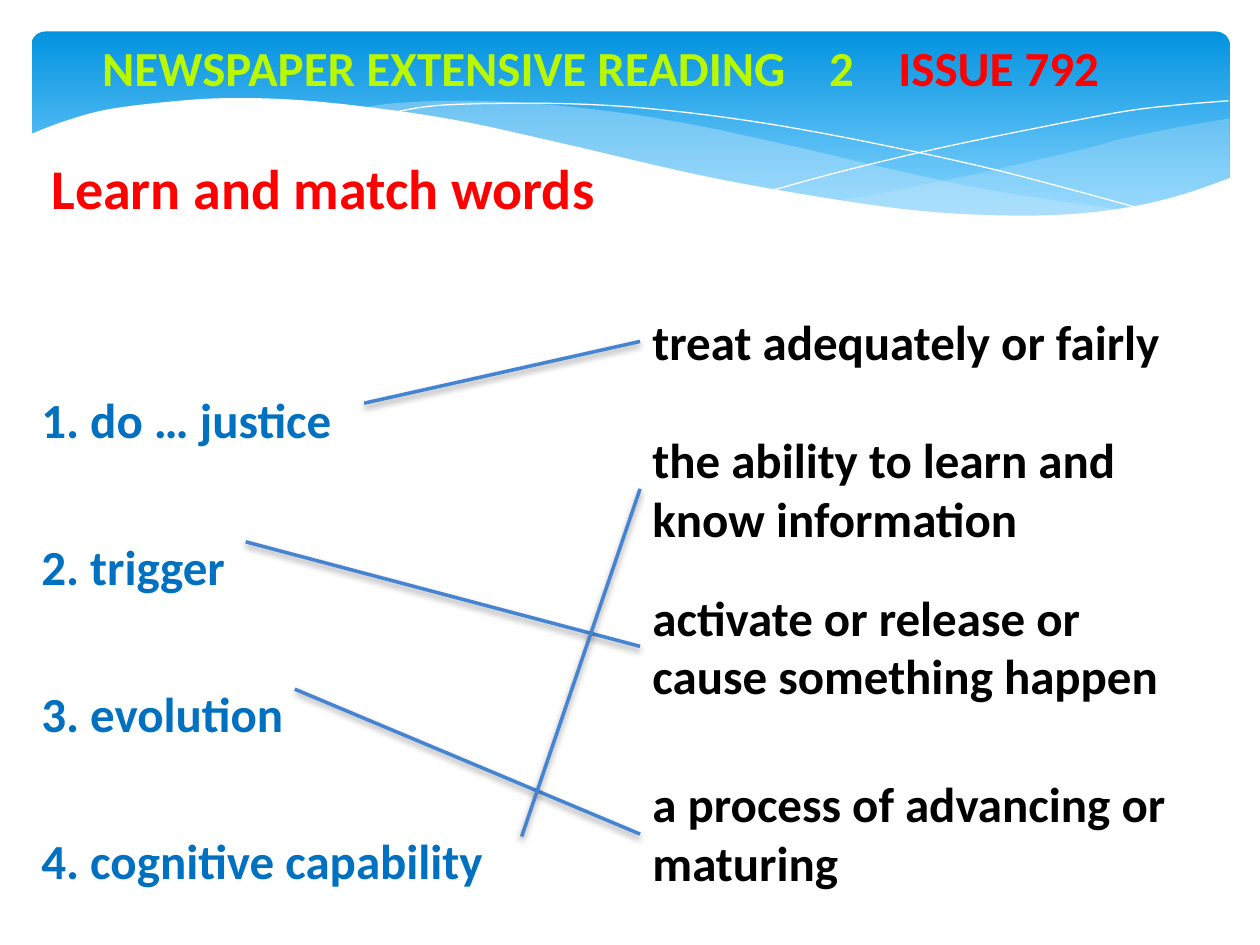
from pptx import Presentation
from pptx.dml.color import RGBColor
from pptx.enum.shapes import MSO_CONNECTOR, MSO_SHAPE
from pptx.enum.text import MSO_AUTO_SIZE, PP_ALIGN
from pptx.oxml import parse_xml
from pptx.oxml.ns import nsdecls
from pptx.util import Inches, Pt
from lxml.etree import SubElement

HUES = {
    "deep": "0293E0", "sky": "83D3FE", "pale": "C6E7FC", "white": "FFFFFF",
    "lime": "B9F800", "red": "FF0000", "blue": "0070C0", "black": "000000",
    "link": "4584D3",
}

RIGHT = [
    [(9.76, 0.94), (9.35, 1.01), (8.91, 1.1), (8.61, 1.18), (7.79, 1.37), (7.06, 1.52), (6.61, 1.6)],
    [(6.61, 1.6), (7.19, 1.67), (7.81, 1.72), (8.35, 1.72), (8.89, 1.66), (9.35, 1.56), (9.76, 1.41)],
]
MID = [
    [(8.93, 1.67), (8.37, 1.59), (7.75, 1.49), (7.06, 1.34), (6.29, 1.16), (5.55, 1),
     (4.89, 0.89), (4.2, 0.82), (3.61, 0.8), (3.13, 0.82), (2.86, 0.86)],
    [(2.86, 0.86), (3.42, 0.94), (4.04, 1.06), (4.91, 1.26), (5.66, 1.43), (6.34, 1.56),
     (6.95, 1.65), (7.61, 1.71), (8.18, 1.73), (8.57, 1.71), (8.93, 1.67)],
]
BASE = [
    [(9.77, 1.41), (9.4, 1.54), (8.99, 1.64), (8.5, 1.7), (7.93, 1.71), (7.26, 1.67),
     (6.48, 1.56), (5.55, 1.39), (4.47, 1.14), (3.65, 0.96), (2.92, 0.85), (2.3, 0.79),
     (1.77, 0.78), (1.32, 0.81), (0.85, 0.87), (0.52, 0.96), (0.23, 1.07)],
    [(0.23, 2.24), (9.77, 2.24)],
]
FALL = [[(3.09, 0.9), (3.44, 0.84), (4.01, 0.82), (4.69, 0.83), (5.33, 0.88), (6.08, 0.98),
         (6.95, 1.14), (7.95, 1.36), (9.07, 1.66)]]
RISE = [[(6.13, 1.51), (6.72, 1.35), (7.48, 1.17), (8.36, 0.99), (8.95, 0.88), (9.38, 0.83), (9.75, 0.8)]]


def curve(knots, steps=6):
    ends = [knots[0], *knots, knots[-1]]
    dots = [knots[0]]
    for quad in zip(ends, ends[1:], ends[2:], ends[3:]):
        for step in range(1, steps + 1):
            t = step / steps
            dots.append(tuple(
                (2 * b + (c - a) * t + (2 * a - 5 * b + 4 * c - d) * t ** 2
                 + (3 * b - a - 3 * c + d) * t ** 3) / 2
                for a, b, c, d in zip(*quad)))
    return dots


class Deck:
    font = "Calibri"

    def __init__(self):
        self.file = Presentation()
        self.file.slide_width, self.file.slide_height = Inches(10), Inches(7.5)
        self.slide = self.file.slides.add_slide(self.file.slide_layouts[6])

    def hue(self, name):
        return RGBColor.from_string(HUES[name])

    def panel(self, x, y, w, h):
        box = self.slide.shapes.add_shape(
            MSO_SHAPE.ROUNDED_RECTANGLE, Inches(x), Inches(y), Inches(w), Inches(h))
        box.adjustments[0] = 0.07
        box.shadow.inherit = False
        box.line.fill.background()
        box.fill.gradient()
        box.fill.gradient_angle = 270
        for stop, (name, spot) in zip(box.fill.gradient_stops, (("deep", 0), ("sky", 0.9))):
            stop.color.rgb = self.hue(name)
            stop.position = spot

    def trace(self, edges, close):
        dots = [(Inches(x), Inches(y)) for edge in edges for x, y in curve(edge)]
        pen = self.slide.shapes.build_freeform(*dots[0])
        pen.add_line_segments(dots[1:], close=close)
        form = pen.convert_to_shape()
        form.shadow.inherit = False
        return form

    def wave(self, edges, name, alpha=100):
        form = self.trace(edges, True)
        form.line.fill.background()
        form.fill.solid()
        form.fill.fore_color.rgb = self.hue(name)
        if alpha < 100:
            tint = form.fill._xPr.solidFill.srgbClr
            SubElement(tint, tint.tag.replace("srgbClr", "alpha"), val=str(alpha * 1000))

    def stroke(self, edges):
        form = self.trace(edges, False)
        form.fill.background()
        form.line.color.rgb = self.hue("white")
        form.line.width = Pt(0)

    def text(self, x, y, w, h, rows, size=28, wrap=True, space=None, align=None):
        box = self.slide.shapes.add_textbox(Inches(x), Inches(y), Inches(w), Inches(h))
        frame = box.text_frame
        frame.word_wrap = wrap
        frame.auto_size = MSO_AUTO_SIZE.SHAPE_TO_FIT_TEXT
        for spot, (words, name) in enumerate(rows):
            para = frame.add_paragraph() if spot else frame.paragraphs[0]
            para.text = words
            para.alignment = align
            para.line_spacing = space
            self.style(para.runs[0], name, size)
        return frame

    def style(self, run, name, size=28):
        run.font.name = self.font
        run.font.size = Pt(size)
        run.font.bold = True
        run.font.color.rgb = self.hue(name)

    def title(self, x, y, w, h, lead, tail, inset, tabs):
        frame = self.text(x, y, w, h, [(lead, "lime")])
        frame.margin_left = Inches(inset)
        para = frame.paragraphs[0]
        run = para.add_run()
        run.text = tail
        self.style(run, "red")
        marks = "".join(f'<a:tab pos="{Inches(tab)}" algn="l"/>' for tab in tabs)
        para._p.get_or_add_pPr().append(parse_xml(f'<a:tabLst {nsdecls("a")}>{marks}</a:tabLst>'))

    def link(self, start, end):
        line = self.slide.shapes.add_connector(
            MSO_CONNECTOR.STRAIGHT, *(Inches(v) for v in (*start, *end)))
        line.line.color.rgb = self.hue("link")
        line.line.width = Pt(2)
        line._element.spPr.append(parse_xml(
            f'<a:effectLst {nsdecls("a")}><a:outerShdw blurRad="{Pt(4)}" dist="{Pt(2)}" '
            f'dir="5400000" rotWithShape="0"><a:srgbClr val="{HUES["black"]}">'
            '<a:alpha val="38000"/></a:srgbClr></a:outerShdw></a:effectLst>'))


def main():
    deck = Deck()
    deck.panel(0.25, 0.25, 9.51, 1.56)
    deck.wave(RIGHT, "pale", 29)
    deck.wave(MID, "pale", 40)
    deck.stroke(FALL)
    deck.stroke(RISE)
    deck.wave(BASE, "white")

    deck.title(0.32, 0.25, 9.05, 0.57, "NEWSPAPER EXTENSIVE READING\t2\t", "ISSUE 792", 0.49, (5.77, 6.32))
    deck.text(0.31, 1.17, 5, 0.64, [("Learn and match words", "red")], 32, align=PP_ALIGN.JUSTIFY)

    words = ("do … justice", "trigger", "evolution", "cognitive capability")
    rows = [(f"{spot}. {word}", "blue") for spot, word in enumerate(words, 1)]
    deck.text(0.23, 2.34, 3.87, 4.81, rows, wrap=False, space=2.5)

    for y, w, h, sense in (
        (2.42, 4.61, 0.57, "treat adequately or fairly"),
        (3.36, 4.38, 1.04, "the ability to learn and know information"),
        (4.61, 4.38, 1.04, "activate or release or cause something happen"),
        (6.09, 4.38, 1.04, "a process of advancing or maturing"),
    ):
        deck.text(5.08, y, w, h, [(sense, "black")])

    for start, y in (((2.89, 3.2), 2.71), ((1.95, 4.3), 5.13), ((2.34, 5.47), 6.62), ((4.14, 6.64), 3.88)):
        deck.link(start, (5.08, y))

    deck.file.save("out.pptx")


if __name__ == "__main__":
    main()
